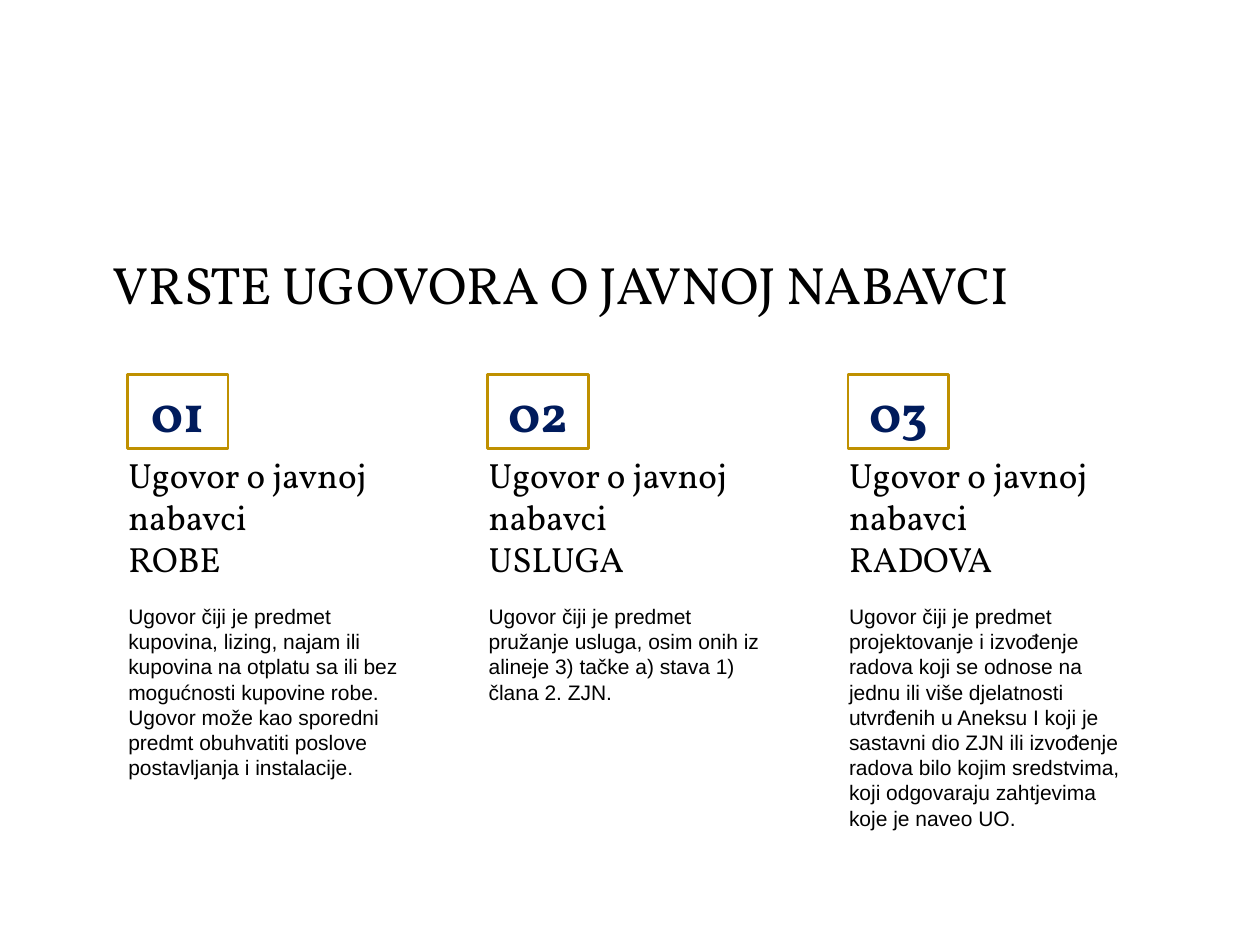
import pptx
import pptx.util
from pptx.dml.color import RGBColor
from pptx.enum.shapes import MSO_SHAPE
from pptx.enum.text import MSO_ANCHOR, MSO_AUTO_SIZE, PP_ALIGN
from pptx.util import Inches

# Content
TITLE = "VRSTE UGOVORA O JAVNOJ NABAVCI"
CONTRACTS = [
    ("01", ["Ugovor o javnoj nabavci", "ROBE"],
     "Ugovor čiji je predmet kupovina, lizing, najam ili kupovina na otplatu sa ili bez "
     "mogućnosti kupovine robe. Ugovor može kao sporedni predmt obuhvatiti poslove "
     "postavljanja i instalacije."),
    ("02", ["Ugovor o javnoj nabavci", "USLUGA"],
     "Ugovor čiji je predmet pružanje usluga, osim onih iz alineje 3) tačke a) stava 1) "
     "člana 2. ZJN."),
    ("03", ["Ugovor o javnoj nabavci", "RADOVA"],
     "Ugovor čiji je predmet projektovanje i izvođenje radova koji se odnose na jednu ili "
     "više djelatnosti utvrđenih u Aneksu I koji je sastavni dio ZJN ili izvođenje radova "
     "bilo kojim sredstvima, koji odgovaraju zahtjevima koje je naveo UO."),
]

# Formats
BLACK = RGBColor(0x00, 0x00, 0x00)
NAVY = RGBColor(0x00, 0x1B, 0x5C)
GOLD = RGBColor(0xBF, 0x90, 0x00)
TITLE_FONT = {"name": "Vollkorn", "size": pptx.util.Pt(30), "bold": False}
NUMBER_FONT = {"name": "Vollkorn", "size": pptx.util.Pt(30), "bold": True}
HEADING_FONT = {"name": "Vollkorn", "size": pptx.util.Pt(20), "bold": False}
BODY_FONT = {"name": "Arial", "size": pptx.util.Pt(12), "bold": False}

# Column grid
LEFT, STEP, WIDTH = 0.92, 2.86, 2.44
NUMBER_INDENT = 0.09


def write(shape, lines, font, color=BLACK, anchor=MSO_ANCHOR.TOP, align=PP_ALIGN.LEFT):
    frame = shape.text_frame
    settings = {"word_wrap": True, "auto_size": MSO_AUTO_SIZE.NONE, "vertical_anchor": anchor}
    for side in ("left", "right", "top", "bottom"):
        settings["margin_" + side] = Inches(0.1)
    for name, value in settings.items():
        setattr(frame, name, value)
    for index, line in enumerate(lines):
        para = frame.add_paragraph() if index else frame.paragraphs[0]
        para.alignment = align
        para.line_spacing = 1.0
        para.space_before = pptx.util.Pt(0)
        span = para.add_run()
        span.text = line
        for name, value in font.items():
            setattr(span.font, name, value)
        span.font.color.rgb = color


def inches(*values):
    return [Inches(value) for value in values]


deck = pptx.Presentation()
deck.slide_width, deck.slide_height = inches(10, 7.5)
page = deck.slides.add_slide(deck.slide_layouts[5])

# Title
title = page.shapes.title
title.left, title.top, title.width, title.height = inches(0.79, 1.9, 8.43, 0.63)
write(title, [TITLE], TITLE_FONT)

# One column per contract type
for column, (number, heading, body) in enumerate(CONTRACTS):
    left = LEFT + column * STEP

    heading_box = page.shapes.add_textbox(*inches(left, 4.19, WIDTH, 0.51))
    write(heading_box, heading, HEADING_FONT, anchor=MSO_ANCHOR.BOTTOM)

    body_box = page.shapes.add_textbox(*inches(left, 4.69, WIDTH, 1.39))
    write(body_box, [body], BODY_FONT)

    number_box = page.shapes.add_shape(
        MSO_SHAPE.RECTANGLE, *inches(left + NUMBER_INDENT, 2.97, 0.8, 0.59))
    number_box.shadow.inherit = False
    number_box.fill.background()
    number_box.line.color.rgb = GOLD
    number_box.line.width = pptx.util.Pt(1.5)
    write(number_box, [number], NUMBER_FONT, NAVY, MSO_ANCHOR.MIDDLE, PP_ALIGN.CENTER)

deck.save("out.pptx")
